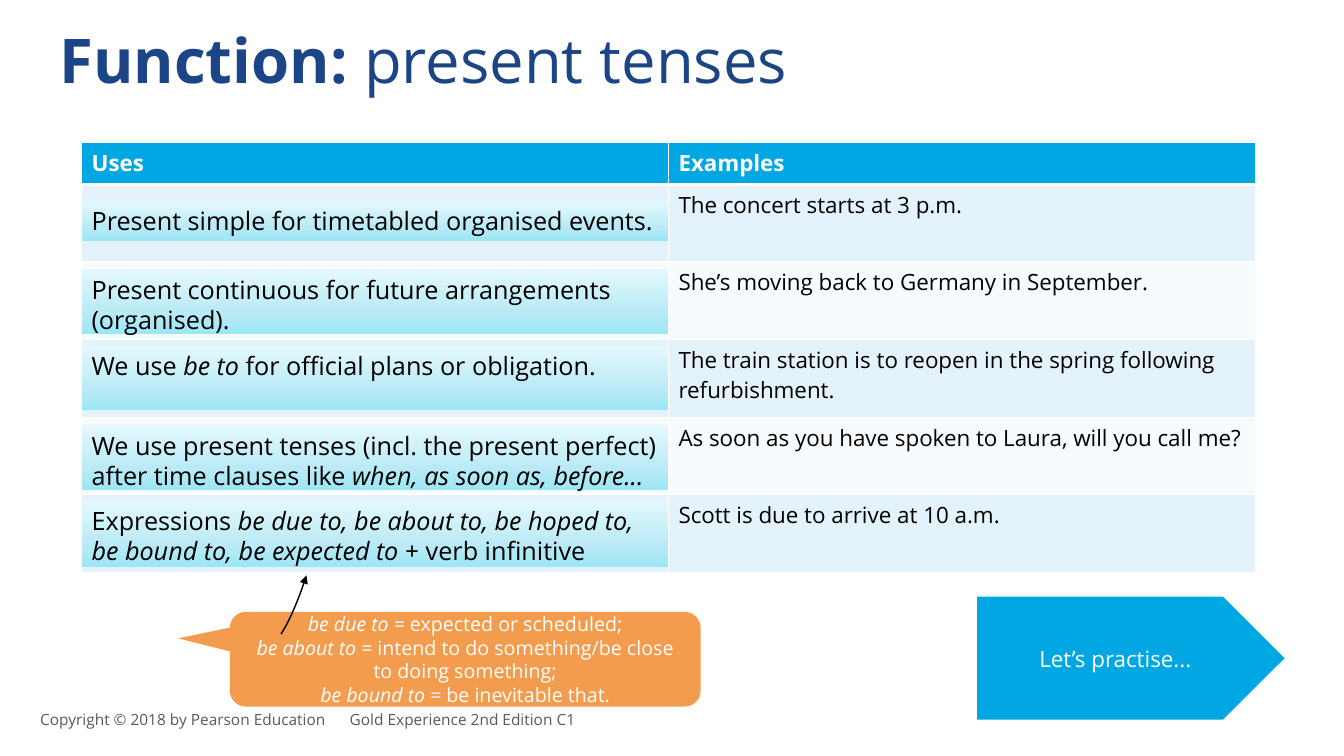
from copy import deepcopy

from lxml.etree import SubElement
from pptx import Presentation
from pptx.dml.color import RGBColor
from pptx.enum.shapes import MSO_SHAPE
from pptx.enum.text import MSO_ANCHOR, MSO_AUTO_SIZE, PP_ALIGN
from pptx.oxml.ns import qn
from pptx.util import Inches, Pt

BLUE, ORANGE, PALE_BLUE = "00A7E3", "F49C4E", "CBE6F9"
BLACK, WHITE = "000000", "FFFFFF"
CARD_GRADIENT = [(0, "9CE7F5"), (0.35, "BBEAF6"), (1, "E4F9FC")]


def rgb(color):
    return RGBColor.from_string(color)


def write(frame, paragraphs, size, color, align=PP_ALIGN.LEFT,
          anchor=MSO_ANCHOR.TOP, mark="italic"):
    """Fill a text frame; each paragraph is a list of (text, marked) runs."""
    frame.word_wrap = True
    frame.auto_size = MSO_AUTO_SIZE.NONE
    frame.vertical_anchor = anchor
    for index, runs in enumerate(paragraphs):
        paragraph = frame.add_paragraph() if index else frame.paragraphs[0]
        paragraph.alignment = align
        for text, marked in runs:
            run = paragraph.add_run()
            run.text = text
            settings = {"name": "Open Sans", "size": Pt(size), "bold": False, mark: marked}
            for name, value in settings.items():
                setattr(run.font, name, value)
            run.font.color.rgb = rgb(color)


presentation = Presentation()
presentation.slide_width = Inches(13.33)
presentation.slide_height = Inches(7.5)
slide = presentation.slides.add_slide(presentation.slide_layouts[5])
shapes = slide.shapes

# Table of uses and examples
examples = [
    "The concert starts at 3 p.m.",
    "She’s moving back to Germany in September.",
    "The train station is to reopen in the spring following refurbishment.",
    "As soon as you have spoken to Laura, will you call me?",
    "Scott is due to arrive at 10 a.m.",
]
rows = [("Uses", "Examples")] + [("", example) for example in examples]
table = shapes.add_table(len(rows), 2, Inches(0.81), Inches(1.41),
                         Inches(11.64), Inches(4.27)).table
for row_index, texts in enumerate(rows):
    is_header = row_index == 0
    table.rows[row_index].height = Inches(0.42 if is_header else 0.77)
    for column_index, text in enumerate(texts):
        cell = table.cell(row_index, column_index)
        widths = {"lnL": 1, "lnR": 1, "lnT": 3 if row_index == 1 else 1,
                  "lnB": 3 if is_header else 1}
        properties = cell._tc.get_or_add_tcPr()
        for side, width in widths.items():
            border = SubElement(properties, qn(f"a:{side}"), w=str(Pt(width)))
            SubElement(SubElement(border, qn("a:solidFill")), qn("a:srgbClr"), val=WHITE)
        cell.fill.solid()
        cell.fill.fore_color.rgb = rgb(BLUE if is_header else PALE_BLUE)
        if not is_header:
            fill_color = properties.find(qn("a:solidFill"))[0]
            SubElement(fill_color, qn("a:alpha"), val="50000" if row_index % 2 else "15000")
        if text:
            paragraph = cell.text_frame.paragraphs[0]
            run = paragraph.add_run()
            run.text = text
            settings = {"name": "Open Sans", "size": Pt(16), "bold": is_header}
            for name, value in settings.items():
                setattr(run.font, name, value)
            run.font.color.rgb = rgb(WHITE if is_header else BLACK)

# Title
title = shapes.title
title.left, title.top, title.width, title.height = map(Inches, (0.49, 0.25, 10.95, 0.88))
write(title.text_frame, [[("Function: ", True), ("present tenses", False)]],
      44, "1C4587", mark="bold")
title.text_frame.paragraphs[0].line_spacing = 0.9

# Gradient cards over the first column
cards = [
    (1.99, 0.4, [("Present simple for timetabled organised events.", False)]),
    (2.67, 0.64, [("Present continuous for future arrangements (organised).", False)]),
    (3.43, 0.64, [("We use ", False), ("be to ", True),
                  ("for official plans or obligation.", False)]),
    (4.22, 0.64, [("We use present tenses (incl. the present perfect) after time clauses like ",
                   False), ("when, as soon as, before...", True)]),
    (4.96, 0.67, [("Expressions ", False),
                  ("be due to, be about to, be hoped to, be bound to, be expected to + ", True),
                  ("verb infinitive", False)]),
]
for top, height, runs in cards:
    card = shapes.add_shape(MSO_SHAPE.RECTANGLE, Inches(0.81), Inches(top),
                            Inches(5.82), Inches(height))
    card.shadow.inherit = False
    card.line.fill.background()
    card.fill.gradient()
    card.fill.gradient_angle = 90
    stop_list = card._element.spPr.find(".//" + qn("a:gsLst"))
    stop_list.append(deepcopy(stop_list[0]))
    for stop, (position, color) in zip(card.fill.gradient_stops, CARD_GRADIENT):
        stop.position = position
        stop.color.rgb = rgb(color)
    write(card.text_frame, [runs], 18, BLACK)

# Practice arrow and explanation callout
definitions = [
    [("be due to = ", True), ("expected or scheduled;", False)],
    [("be about to = ", True), ("intend to do something/be close to doing something;", False)],
    [("be bound to = ", True), ("be inevitable that.", False)],
]
labels = [
    (MSO_SHAPE.PENTAGON, (9.69, 5.92, 3.05, 1.22), [0.5], BLUE, 16,
     [[("Let’s practise...", False)]]),
    (MSO_SHAPE.ROUNDED_RECTANGULAR_CALLOUT, (2.28, 6.07, 4.67, 0.94),
     [-0.61, -0.22, 0.17], ORANGE, 14, definitions),
]
for preset, box, adjustments, color, size, paragraphs in labels:
    label = shapes.add_shape(preset, *map(Inches, box))
    label.shadow.inherit = False
    label.line.fill.background()
    label.fill.solid()
    label.fill.fore_color.rgb = rgb(color)
    for index, adjustment in enumerate(adjustments):
        label.adjustments[index] = adjustment
    label.text_frame.margin_left = label.text_frame.margin_right = Inches(0.15)
    write(label.text_frame, paragraphs, size, WHITE, PP_ALIGN.CENTER, MSO_ANCHOR.MIDDLE)

# Curved arrow from the callout to the last card
arc = shapes.add_shape(MSO_SHAPE.ARC, Inches(2.15), Inches(5.48), Inches(1.57), Inches(0.26))
arc.shadow.inherit = False
arc.fill.background()
arc.line.color.rgb = rgb(BLACK)
arc.line.width = Pt(1)
arc.rotation = 107.3
arc._element.spPr.xfrm.set("flipH", "1")
for index, adjustment in enumerate((111.04, 146.7)):
    arc.adjustments[index] = adjustment
SubElement(arc.line._get_or_add_ln(), qn("a:tailEnd"), type="triangle")

# Copyright line, with a tab stop before the book name
footer = shapes.add_textbox(Inches(0.3), Inches(6.94), Inches(6.92), Inches(0.4))
footer_frame = footer.text_frame
for side in ("left", "top", "right", "bottom"):
    setattr(footer_frame, f"margin_{side}", Inches(0.1))
tab_list = SubElement(footer_frame.paragraphs[0]._p.get_or_add_pPr(), qn("a:tabLst"))
SubElement(tab_list, qn("a:tab"), pos=str(Inches(3.07)), algn="l")
write(footer_frame, [[("Copyright © 2018 by Pearson Education\tGold Experience 2nd Edition C1", False)]],
      11, "595959", anchor=MSO_ANCHOR.MIDDLE)

presentation.save("out.pptx")
